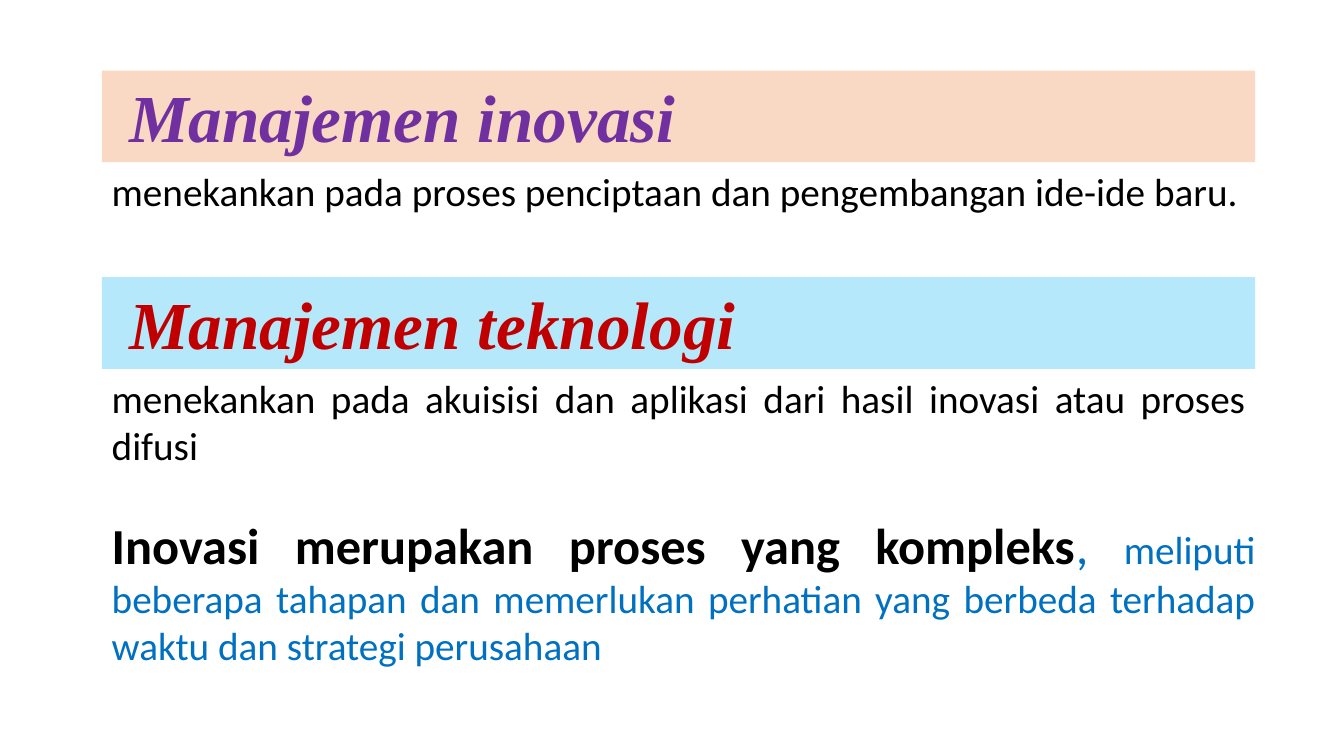
from lxml.etree import SubElement
from pptx import Presentation
from pptx.dml.color import RGBColor
from pptx.enum.shapes import MSO_SHAPE as SHAPE
from pptx.enum.text import MSO_ANCHOR as ANCHOR, PP_ALIGN as ALIGN
from pptx.oxml.ns import qn
from pptx.util import Inches, Pt

SECTIONS = [
    ("Manajemen inovasi", "7030A0", "ED7D31",
     "menekankan pada proses penciptaan dan pengembangan ide-ide baru.", 0.57),
    ("Manajemen teknologi", "C00000", "00B0F0",
     "menekankan pada akuisisi dan aplikasi dari hasil inovasi atau proses difusi", 1.04),
]
CLOSING = [
    ("Inovasi merupakan proses yang kompleks", 36, "000000", True),
    (", ", 36, "0070C0", False),
    ("meliputi beberapa tahapan dan memerlukan perhatian yang berbeda terhadap "
     "waktu dan strategi perusahaan", 28, "0070C0", False),
]
LEFT, WIDTH, CLOSING_WIDTH = 1.01, 11.44, 11.54
TOP, PITCH, BAND_HEIGHT = 0.7, 2.05, 0.91
CLOSING_TOP, CLOSING_HEIGHT = 5.05, 1.65
HEADING_INSET, BAND_OPACITY = 0.27, 29


def rgb(hex_color):
    """Turn a hex string into a colour."""
    return RGBColor.from_string(hex_color)


def add_run(p, text, size, color, bold=False, italic=False, font="Calibri"):
    """Append one formatted run to a paragraph."""
    r = p.add_run()
    r.text = text
    r.font.name, r.font.size = font, Pt(size)
    r.font.bold, r.font.italic = bold, italic
    r.font.color.rgb = rgb(color)


def add_band(s, top, heading, color, fill):
    """Draw a translucent band with its heading."""
    sp = s.shapes.add_shape(SHAPE.RECTANGLE, Inches(LEFT), Inches(top),
                            Inches(WIDTH), Inches(BAND_HEIGHT))
    sp.shadow.inherit = False
    sp.line.fill.background()
    sp.fill.solid()
    sp.fill.fore_color.rgb = rgb(fill)
    tint = sp.fill._xPr.find(qn("a:solidFill"))[0]
    SubElement(tint, qn("a:alpha")).set("val", str(BAND_OPACITY * 1000))
    tf = sp.text_frame
    tf.word_wrap = True
    tf.vertical_anchor = ANCHOR.TOP
    tf.margin_left = Inches(HEADING_INSET)
    p = tf.paragraphs[0]
    p.alignment = ALIGN.LEFT
    add_run(p, heading, 48, color, True, True, "Times New Roman")


def add_body(s, top, width, height, runs):
    """Add a justified text box made of runs."""
    tf = s.shapes.add_textbox(Inches(LEFT), Inches(top),
                              Inches(width), Inches(height)).text_frame
    tf.word_wrap = True
    p = tf.paragraphs[0]
    p.alignment = ALIGN.JUSTIFY
    for run in runs:
        add_run(p, *run)


def main():
    """Build and save the slide."""
    prs = Presentation()
    prs.slide_width, prs.slide_height = Inches(13.33), Inches(7.5)
    s = prs.slides.add_slide(prs.slide_layouts[6])
    for i, (heading, color, fill, body, height) in enumerate(SECTIONS):
        top = TOP + i * PITCH
        add_band(s, top, heading, color, fill)
        add_body(s, top + BAND_HEIGHT, WIDTH, height, [(body, 28, "000000")])
    add_body(s, CLOSING_TOP, CLOSING_WIDTH, CLOSING_HEIGHT, CLOSING)
    prs.save("out.pptx")


if __name__ == "__main__":
    main()
